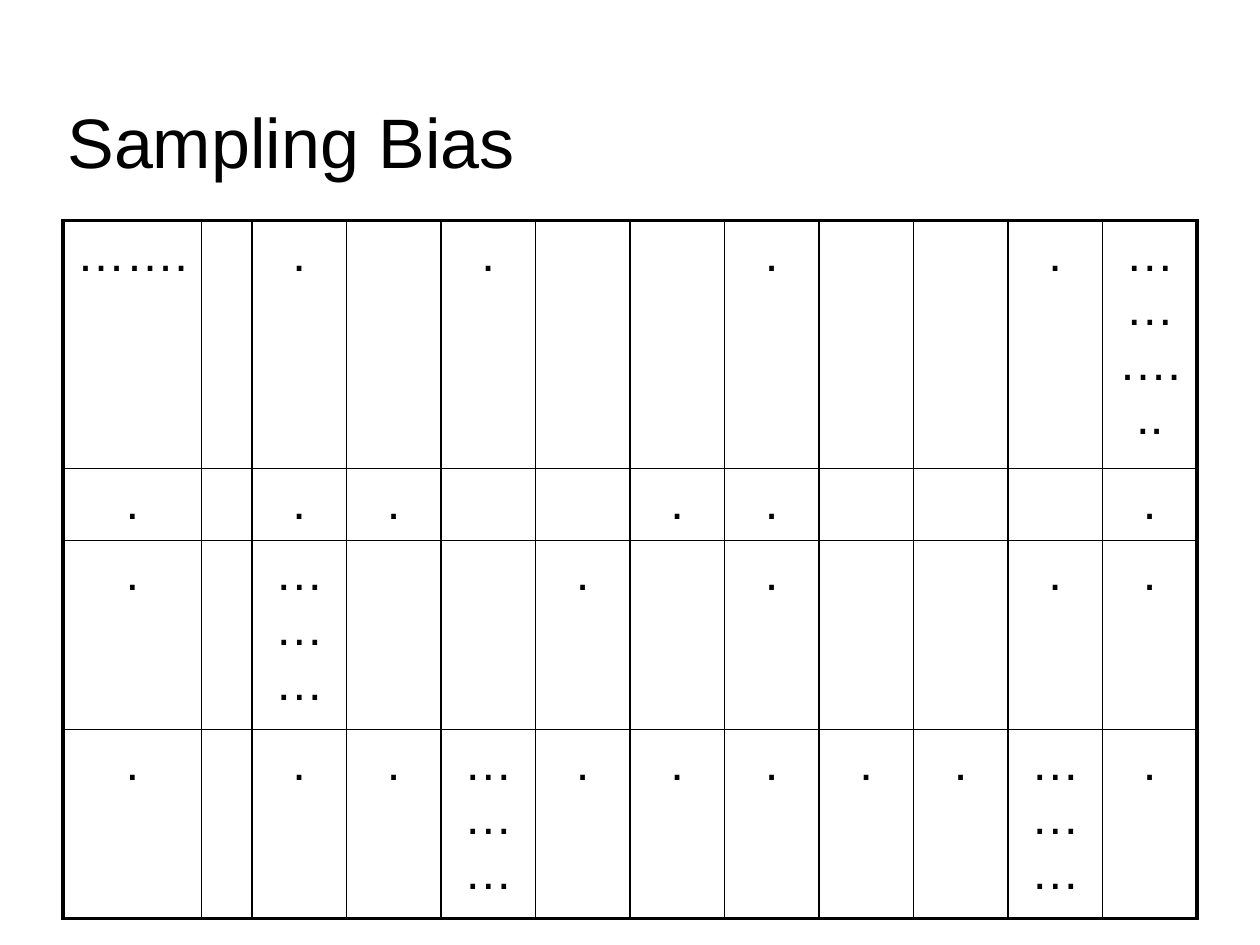
from typing import NamedTuple

from lxml.etree import _Element
from pptx import Presentation
from pptx.dml.color import RGBColor
from pptx.enum.text import MSO_ANCHOR, PP_ALIGN
from pptx.oxml import parse_xml
from pptx.oxml.ns import nsdecls
from pptx.slide import Slide
from pptx.table import _Cell
from pptx.text.text import _Paragraph
from pptx.util import Pt

BLACK = RGBColor(0, 0, 0)
FONT = "Arial"
THIN, THICK = 1, 2.25
WIDTHS = [79.2, 28.8] + [54] * 10


class Row(NamedTuple):
    height: float
    marks: dict[int, str]  # column number to text


ROWS = [
    Row(141.8, {0: "…….", 2: ".", 4: ".", 7: ".", 10: ".", 11: "………..."}),
    Row(41, dict.fromkeys((0, 2, 3, 6, 7, 11), ".")),
    Row(108, dict.fromkeys((0, 5, 7, 10, 11), ".") | {2: "………"}),
    Row(108, dict.fromkeys((0, 2, 3, 5, 6, 7, 8, 9, 11), ".")
        | dict.fromkeys((4, 10), "………")),
]


def style(para: _Paragraph, size: float) -> None:
    para.font.name = FONT
    para.font.size = Pt(size)
    para.font.color.rgb = BLACK


def border(side: str, width: float) -> _Element:
    return parse_xml(
        f'<a:ln{side} {nsdecls("a")} w="{Pt(width)}"><a:solidFill>'
        f'<a:srgbClr val="{BLACK}"/></a:solidFill></a:ln{side}>')


def draw_cell(cell: _Cell, text: str, row: int, col: int) -> None:
    """Fill in one cell; its edges are thick where they frame the table."""
    cell.fill.background()
    para = cell.text_frame.paragraphs[0]
    para.text = text
    para.alignment = PP_ALIGN.CENTER
    style(para, 28)
    outer = {"L": col == 0, "R": col == len(WIDTHS) - 1,
             "T": row == 0, "B": row == len(ROWS) - 1}
    props = cell._tc.get_or_add_tcPr()
    for spot, (side, edge) in enumerate(outer.items()):
        props.insert(spot, border(side, THICK if edge else THIN))


def draw_title(slide: Slide, text: str) -> None:
    box = slide.shapes.add_textbox(Pt(31.5), Pt(18), Pt(612), Pt(90))
    frame = box.text_frame
    frame.word_wrap = True
    frame.vertical_anchor = MSO_ANCHOR.BOTTOM
    frame.text = text
    style(frame.paragraphs[0], 40)


def draw_table(slide: Slide) -> None:
    total = sum(row.height for row in ROWS)
    table = slide.shapes.add_table(
        len(ROWS), len(WIDTHS), Pt(36), Pt(126), Pt(sum(WIDTHS)), Pt(total)).table
    table.first_row = table.horz_banding = False
    for col, width in enumerate(WIDTHS):
        table.columns[col].width = Pt(width)
    for num, row in enumerate(ROWS):
        table.rows[num].height = Pt(row.height)
        for col in range(len(WIDTHS)):
            draw_cell(table.cell(num, col), row.marks.get(col, ""), num, col)


def main() -> None:
    deck = Presentation()
    deck.slide_width, deck.slide_height = Pt(720), Pt(540)
    slide = deck.slides.add_slide(deck.slide_layouts[6])
    draw_title(slide, "Sampling Bias")
    draw_table(slide)
    deck.save("out.pptx")


if __name__ == "__main__":
    main()
